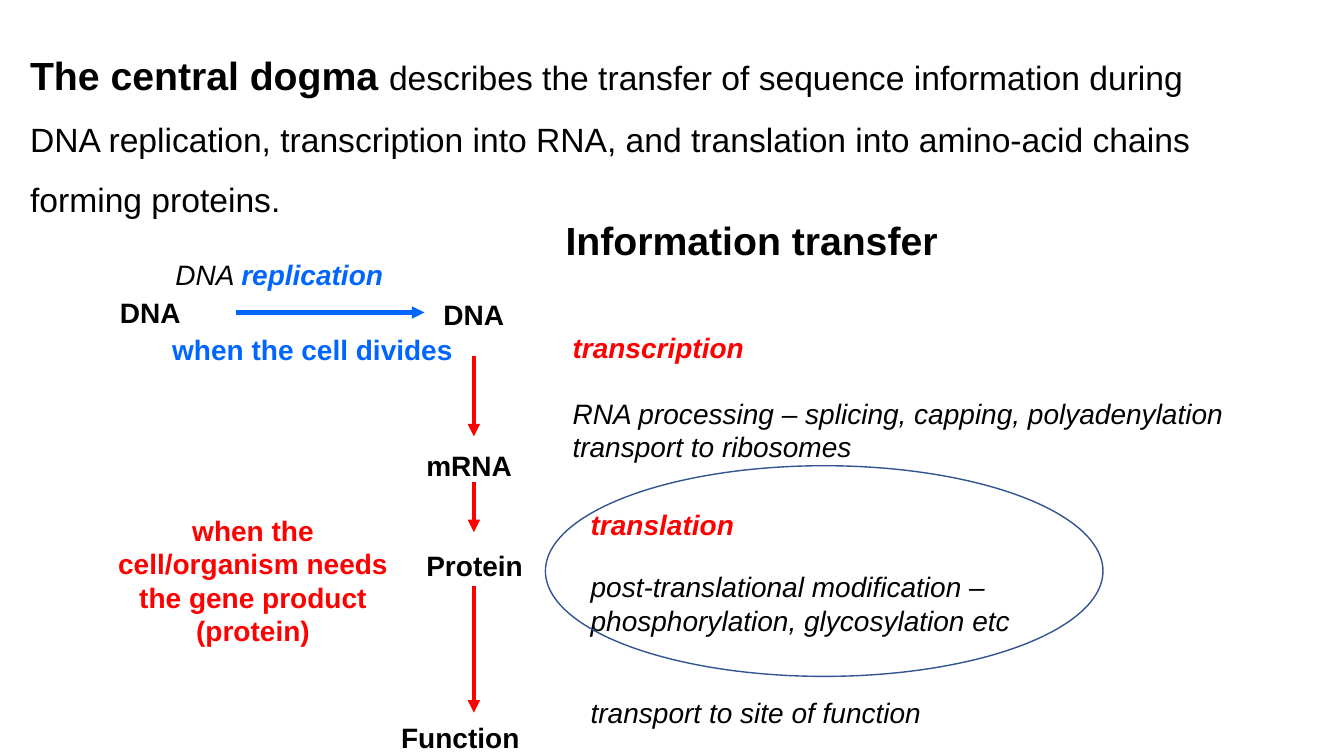
from lxml.etree import SubElement
from pptx import Presentation
from pptx.dml.color import RGBColor
from pptx.enum.shapes import MSO_CONNECTOR, MSO_SHAPE
from pptx.enum.text import MSO_ANCHOR, MSO_AUTO_SIZE, PP_ALIGN
from pptx.oxml.ns import qn
from pptx.util import Inches, Pt

BLACK = RGBColor(0x00, 0x00, 0x00)
RED = RGBColor(0xFF, 0x00, 0x00)
BLUE = RGBColor(0x00, 0x66, 0xFF)
OUTLINE = RGBColor(0x32, 0x54, 0x91)
FONT = "Arial"
MAIN_X = 4.7


def add_run(p, text, color=BLACK, bold=False, italic=False, size=20):
    r = p.add_run()
    r.text = text
    r.font.name = FONT
    r.font.size = Pt(size)
    r.font.bold = bold
    r.font.italic = italic
    r.font.color.rgb = color


def add_text(s, left, top, width, height=0.35, wrap=False, align=PP_ALIGN.LEFT):
    """Add an empty text box and return its first paragraph and text frame."""
    box = s.shapes.add_textbox(Inches(left), Inches(top), Inches(width), Inches(height))
    tf = box.text_frame
    tf.word_wrap = wrap
    tf.auto_size = MSO_AUTO_SIZE.SHAPE_TO_FIT_TEXT
    p = tf.paragraphs[0]
    p.alignment = align
    return p, tf


def add_arrow(s, x1, y1, x2, y2, color):
    line = s.shapes.add_connector(
        MSO_CONNECTOR.STRAIGHT, Inches(x1), Inches(y1), Inches(x2), Inches(y2))
    line.line.color.rgb = color
    line.line.width = Pt(3)
    SubElement(line.line._get_or_add_ln(), qn("a:tailEnd"), type="triangle")
    SubElement(line._element.spPr, qn("a:effectLst"))


def add_title(s):
    title = s.shapes.title
    title.left, title.top = Inches(5.51), Inches(2.15)
    title.width, title.height = Inches(5.24), Inches(1.25)
    tf = title.text_frame
    tf.word_wrap = True
    tf.auto_size = MSO_AUTO_SIZE.NONE
    tf.vertical_anchor = MSO_ANCHOR.TOP
    p = tf.paragraphs[0]
    p.alignment = PP_ALIGN.LEFT
    p.line_spacing = 0.9
    add_run(p, "Information transfer", bold=True, size=28)


def add_definition(s):
    p, _ = add_text(s, 0.2, 0.23, 12.39, 1.94, wrap=True)
    p.line_spacing = 1.5
    add_run(p, "The central dogma ", bold=True, size=28)
    add_run(p, "describes the transfer of sequence information during DNA "
            "replication, transcription into RNA, and translation into "
            "amino-acid chains forming proteins.", size=24)


def add_pathway(s):
    """Molecules, the arrows between them and when each transfer happens."""
    for text, left, top, width in (
            ("DNA", 1.09, 2.88, 0.81),
            ("DNA", 4.3, 2.9, 0.81),
            ("mRNA", 4.13, 4.4, 1.06),
            ("Protein", 4.13, 5.39, 1.17),
            ("Function", 3.88, 7.1, 1.39)):
        p, _ = add_text(s, left, top, width)
        add_run(p, text, bold=True)

    add_arrow(s, 2.34, 3.1, 4.21, 3.1, BLUE)
    for start, end in ((3.53, 4.33), (4.78, 5.28), (5.81, 7.07)):
        add_arrow(s, MAIN_X, start, MAIN_X, end, RED)

    p, _ = add_text(s, 1.64, 2.51, 2.28)
    add_run(p, "DNA ", italic=True)
    add_run(p, "replication", BLUE, bold=True, italic=True)

    for text, left, top, height, color in (
            ("when the cell divides", 1.5, 3.25, 0.35, BLUE),
            ("when the cell/organism needs the gene product (protein)",
             0.91, 5.04, 1.15, RED)):
        p, _ = add_text(s, left, top, 3.2, height, wrap=True, align=PP_ALIGN.CENTER)
        add_run(p, text, color, bold=True)


def add_processes(s):
    p, tf = add_text(s, 5.58, 3.23, 7.01, 1.15, wrap=True)
    add_run(p, "transcription", RED, bold=True, italic=True)
    for text, gap in (("RNA processing – splicing, capping, polyadenylation", 23),
                      ("transport to ribosomes", 0)):
        p = tf.add_paragraph()
        p.space_before = Pt(gap)
        add_run(p, text, italic=True)

    p, _ = add_text(s, 5.76, 4.99, 6.07, wrap=True)
    add_run(p, "translation", RED, bold=True, italic=True)

    # The narrower box keeps the line break after the dash.
    p, _ = add_text(s, 5.76, 5.6, 5.2, 0.62, wrap=True)
    add_run(p, "post-translational modification – phosphorylation, "
            "glycosylation etc", italic=True)

    p, _ = add_text(s, 5.76, 6.85, 3.5)
    add_run(p, "transport to site of function", italic=True)


def add_highlight(s):
    ellipse = s.shapes.add_shape(
        MSO_SHAPE.OVAL, Inches(5.41), Inches(4.62), Inches(5.53), Inches(2.09))
    ellipse.shadow.inherit = False
    ellipse.fill.background()
    ellipse.line.color.rgb = OUTLINE
    ellipse.line.width = Pt(1)


def main():
    prs = Presentation()
    prs.slide_width, prs.slide_height = Inches(13.33), Inches(7.5)
    s = prs.slides.add_slide(prs.slide_layouts[5])
    add_title(s)
    add_definition(s)
    add_pathway(s)
    add_processes(s)
    add_highlight(s)
    prs.save("out.pptx")


if __name__ == "__main__":
    main()
